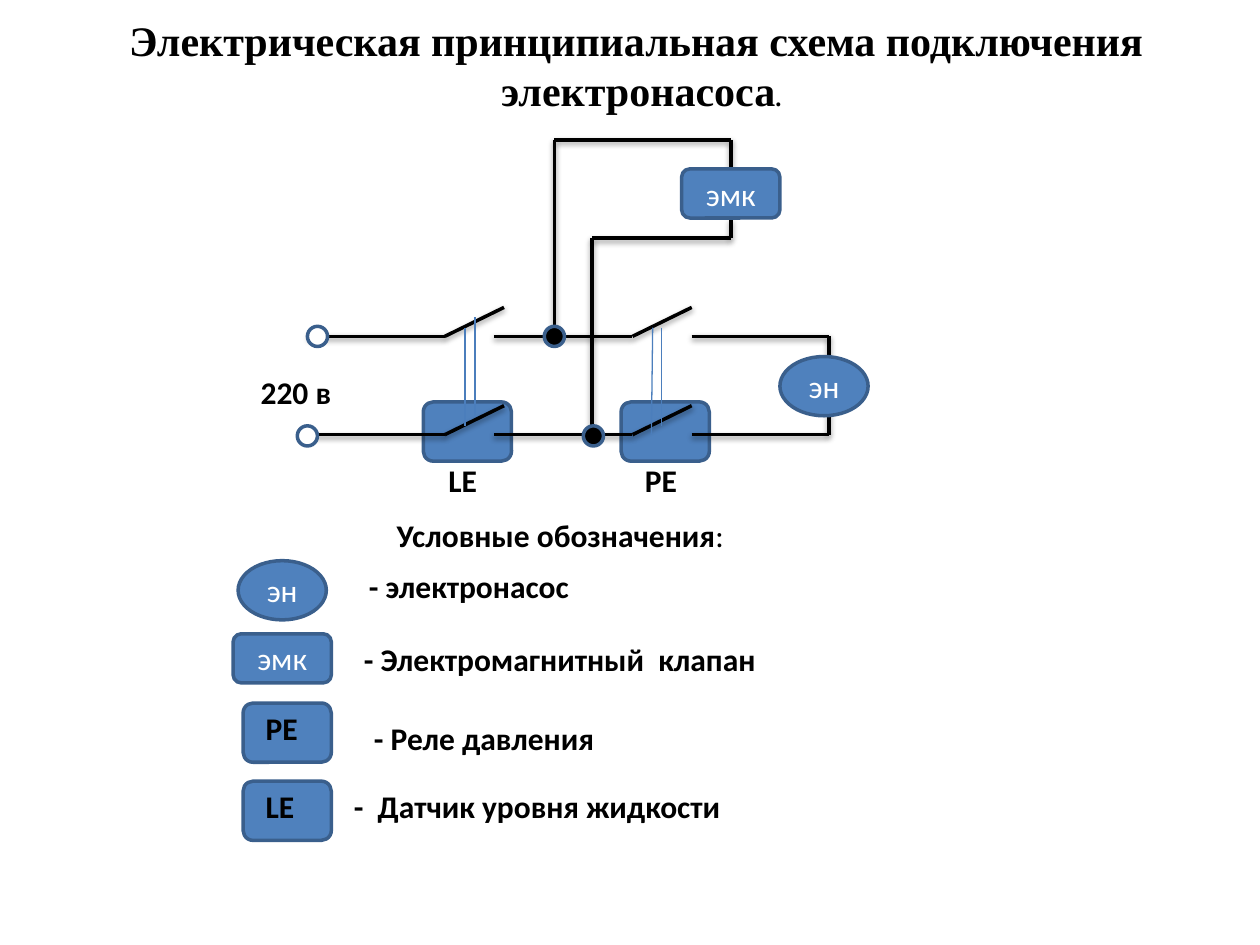
import pptx
import pptx.util
import pptx.dml.color
import pptx.enum.shapes
import pptx.enum.text
import pptx.oxml
import pptx.oxml.ns

Inches, Pt = pptx.util.Inches, pptx.util.Pt
RGB = pptx.dml.color.RGBColor.from_string
KIND = pptx.enum.shapes.MSO_SHAPE
ALIGN = pptx.enum.text.PP_ALIGN
MIDDLE = pptx.enum.text.MSO_ANCHOR.MIDDLE

C = {"blue": "4F81BD", "edge": "3A5F8C", "link": "4B7EBC",
     "black": "000000", "white": "FFFFFF"}
TITLE = {"name": "Times New Roman", "size": Pt(24), "bold": True}
BOLD = {"name": "Calibri", "size": Pt(18), "bold": True}
PLAIN = {**BOLD, "bold": False}
FRAME = {"margin_left": Inches(0.1), "margin_right": Inches(0.1),
         "margin_top": Inches(0.05), "margin_bottom": Inches(0.05)}
EFFECTS = '<a:effectLst xmlns:a="http://schemas.openxmlformats.org/drawingml/2006/main">%s</a:effectLst>'
SHADOW = ('<a:outerShdw blurRad="40000" dist="20000" dir="5400000" rotWithShape="0">'
          '<a:srgbClr val="000000"><a:alpha val="38000"/></a:srgbClr></a:outerShdw>')

prs = pptx.Presentation()
prs.slide_width, prs.slide_height = Inches(10), Inches(7.5)
s = prs.slides.add_slide(prs.slide_layouts[5])


def write(p, text, fmt, color="black"):
    r = p.add_run()
    r.text = text
    for key, value in fmt.items():
        setattr(r.font, key, value)
    r.font.color.rgb = RGB(C[color])


def add_symbol(kind, x, y, w, h, fill="blue", label=None):
    sp = s.shapes.add_shape(kind, Inches(x), Inches(y), Inches(w), Inches(h))
    sp.shadow.inherit = False
    sp.fill.solid()
    sp.fill.fore_color.rgb = RGB(C[fill])
    sp.line.color.rgb = RGB(C["edge"])
    sp.line.width = Pt(2)
    if label:
        sp.text_frame.vertical_anchor = MIDDLE
        p = sp.text_frame.paragraphs[0]
        p.alignment = ALIGN.CENTER
        write(p, label, PLAIN, "white")


# Title
sp = s.shapes.title
sp.left, sp.top, sp.width, sp.height = Inches(0.88), Inches(0.06), Inches(8.42), Inches(0.91)
tf = sp.text_frame
for key, value in {**FRAME, "word_wrap": False, "vertical_anchor": MIDDLE,
                   "auto_size": pptx.enum.text.MSO_AUTO_SIZE.NONE}.items():
    setattr(tf, key, value)
p = tf.paragraphs[0]
p.alignment = ALIGN.CENTER
write(p, "Электрическая принципиальная схема подключения ", TITLE)
p = tf.add_paragraph()
p.alignment = ALIGN.CENTER
write(p, "электронасоса", TITLE)
write(p, ".", {**TITLE, "size": Pt(14)})

# Sensor and relay bodies behind the contacts
for x in (3.36, 4.93):
    add_symbol(KIND.ROUNDED_RECTANGLE, x, 3.19, 0.7, 0.47)

# Wires: two supply rails with a pair of open contacts each
wires = []
for y in (2.67, 3.45):
    wires += [(2.44, y, 3.53, y), (3.92, y, 5.02, y), (5.49, y, 6.58, y)]
    wires += [(x, y, x + 0.47, y - 0.23) for x in (3.53, 5.02)]
# Valve branch and pump branch
wires += [(4.7, 3.45, 4.7, 1.89), (4.4, 2.67, 4.4, 1.11),
          (5.8, 1.11, 4.4, 1.11), (5.8, 1.89, 4.7, 1.89),
          (5.8, 1.89, 5.8, 1.74), (5.8, 1.11, 5.8, 1.35),
          (6.58, 2.67, 6.58, 3.45)]
# Mechanical links between contacts
links = [(3.69, 2.6, 3.69, 3.38), (3.77, 2.52, 3.77, 3.3),
         (5.25, 2.6, 5.25, 3.38), (5.18, 2.6, 5.17, 3.45)]
for group, color, width, effect in ((wires, "black", 2, SHADOW), (links, "link", 0.75, "")):
    for ends in group:
        ln = s.shapes.add_connector(pptx.enum.shapes.MSO_CONNECTOR.STRAIGHT,
                                    *[Inches(v) for v in ends])
        ln.line.color.rgb = RGB(C[color])
        ln.line.width = Pt(width)
        sppr = ln._element.find(pptx.oxml.ns.qn("p:spPr"))
        sppr.append(pptx.oxml.parse_xml(EFFECTS % effect))

# Terminals and junctions
for x, y, fill in ((2.36, 3.38, "white"), (2.44, 2.59, "white"),
                   (4.32, 2.59, "black"), (4.63, 3.38, "black")):
    add_symbol(KIND.OVAL, x, y, 0.16, 0.16, fill)

# Valve and pump, in the circuit and in the legend
for x, y in ((5.41, 1.34), (1.85, 5.03)):
    add_symbol(KIND.ROUNDED_RECTANGLE, x, y, 0.78, 0.39, label="эмк")
for x, y in ((6.19, 2.83), (1.89, 4.45)):
    add_symbol(KIND.OVAL, x, y, 0.7, 0.47, label="эн")

# Legend bodies for relay and sensor
for y in (5.58, 6.2):
    add_symbol(KIND.ROUNDED_RECTANGLE, 1.93, y, 0.7, 0.47)

# Captions
captions = [
    (1.97, 2.91, 0.86, "220 в"), (3.46, 3.61, 0.47, "LE"), (5.02, 3.61, 0.46, "PE"),
    (3.05, 4.05, 3.59, "Условные обозначения"),
    (2.83, 4.45, 2.03, "- электронасос"),
    (2.79, 5.03, 3.44, "- Электромагнитный  клапан"),
    (2.01, 5.58, 0.46, "PE"), (2.87, 5.66, 2.03, "- Реле давления"),
    (2.01, 6.2, 0.47, "LE"), (2.71, 6.2, 3.36, "-  Датчик уровня жидкости"),
]
for x, y, w, text in captions:
    tf = s.shapes.add_textbox(Inches(x), Inches(y), Inches(w), Inches(0.4)).text_frame
    tf.word_wrap = text != "PE"
    write(tf.paragraphs[0], text, BOLD)
    if text == "Условные обозначения":
        write(tf.paragraphs[0], ":", PLAIN)

prs.save("out.pptx")
